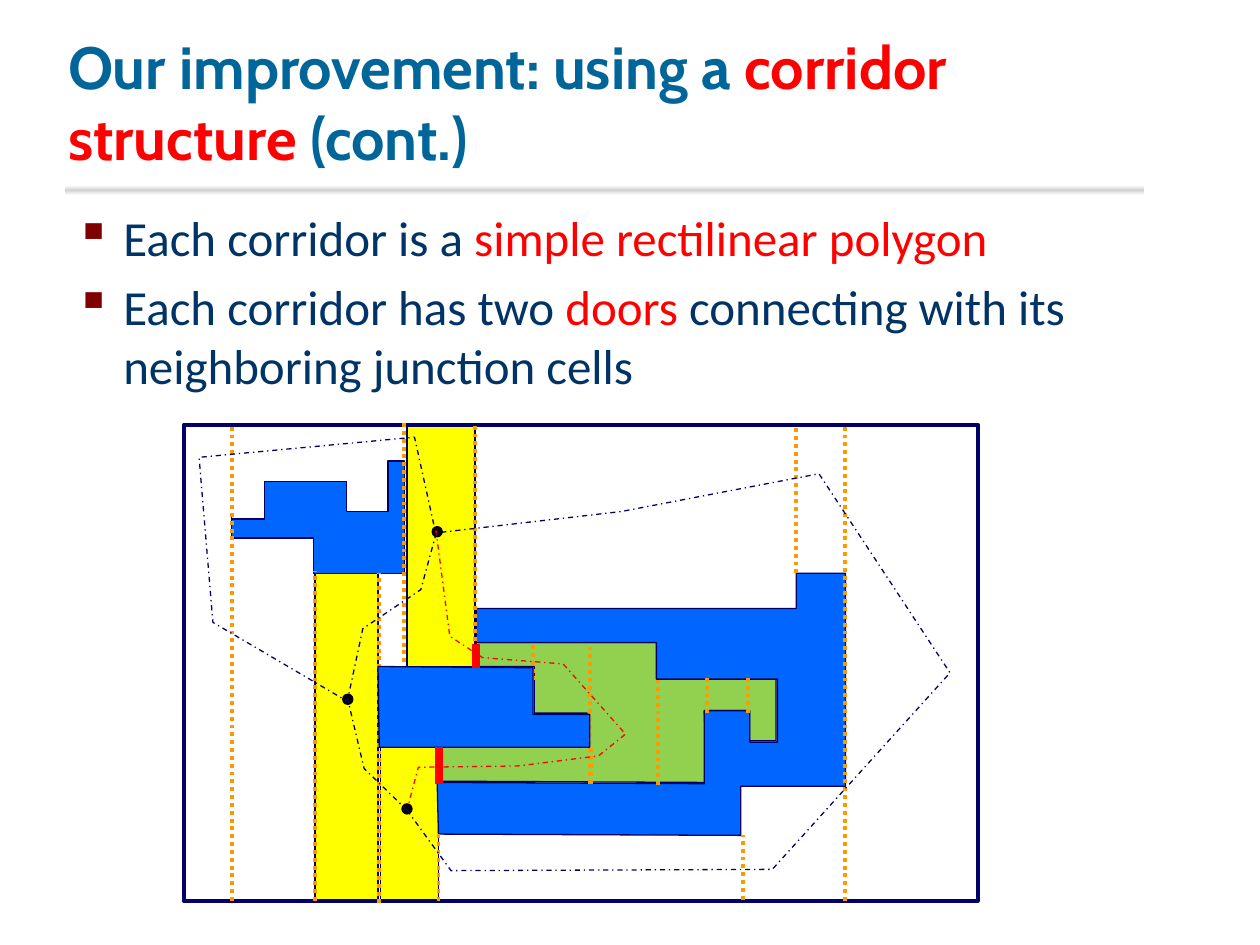
from typing import NamedTuple, Optional

from lxml import etree
from pptx import Presentation, util as u
from pptx.dml.color import RGBColor
from pptx.enum import dml, shapes, text
from pptx.oxml.ns import qn

COLORS = {
    "title": "006699", "body": "003366", "accent": "FF0000", "bullet": "800000",
    "outline": "000066", "obstacle": "0066FF", "junction": "FFFF00",
    "corridor": "92D050", "cut": "FF9900", "node": "000000",
    "rule": "D2D2D2", "paper": "FFFFFF",
}
COLUMNS, ROWS = 1000, 750
CELL = u.Inches(0.01)
SOLID, DOTTED, DASHED = (dml.MSO_LINE.SOLID, dml.MSO_LINE.ROUND_DOT, dml.MSO_LINE.DASH_DOT)


class Box(NamedTuple):
    left: float
    top: float
    width: float
    height: float


class Outline(NamedTuple):
    points: list
    fill: Optional[str] = None
    line: str = "outline"
    dash: dml.MSO_LINE = SOLID


class Segment(NamedTuple):
    start: tuple
    end: tuple
    color: str = "cut"
    width: float = 2.25
    dash: dml.MSO_LINE = DOTTED


def rgb(name: str) -> RGBColor:
    return RGBColor.from_string(COLORS[name])


def cells(*counts: float) -> list:
    return [int(count * CELL) for count in counts]


def style(shape, fill: Optional[str], line: Optional[str], width=0.75, dash=SOLID) -> None:
    shape.shadow.inherit = False
    if fill:
        shape.fill.solid()
        shape.fill.fore_color.rgb = rgb(fill)
    else:
        shape.fill.background()
    if line:
        shape.line.color.rgb = rgb(line)
        shape.line.width = u.Pt(width)
        shape.line.dash_style = dash
    else:
        shape.line.fill.background()


def draw_box(slide, box: Box, fill=None, line="outline", width=0.75,
             kind=shapes.MSO_SHAPE.RECTANGLE):
    shape = slide.shapes.add_shape(kind, *cells(*box))
    style(shape, fill, line, width)
    return shape


def draw_outline(slide, outline: Outline) -> None:
    first, *others = outline.points
    builder = slide.shapes.build_freeform(*first, scale=CELL)
    builder.add_line_segments(others, close=False)
    style(builder.convert_to_shape(), outline.fill, outline.line, dash=outline.dash)


def draw_segment(slide, segment: Segment) -> None:
    line = slide.shapes.add_connector(
        shapes.MSO_CONNECTOR.STRAIGHT, *cells(*segment.start, *segment.end))
    line.line.color.rgb = rgb(segment.color)
    line.line.width = u.Pt(segment.width)
    line.line.dash_style = segment.dash
    etree.SubElement(line._element.spPr, qn("a:effectLst"))


def draw_rule(slide, box: Box) -> None:
    rule = draw_box(slide, box, "rule", None)
    rule.fill.gradient()
    rule.fill.gradient_angle = 90
    for stop, color in zip(rule.fill.gradient_stops, ("paper", "rule")):
        stop.color.rgb = rgb(color)
        stop.position = 0 if color == "paper" else 0.5
    stops = rule._element.spPr.find(qn("a:gradFill")).find(qn("a:gsLst"))
    last = etree.SubElement(stops, qn("a:gs"), pos="100000")
    etree.SubElement(last, qn("a:srgbClr"), val=COLORS["paper"])


def write(frame, paragraphs: list, *, font: str, size: float, bold=False,
          anchor=text.MSO_ANCHOR.TOP, bullet: Optional[str] = None) -> None:
    frame.word_wrap = True
    frame.auto_size = text.MSO_AUTO_SIZE.NONE
    frame.vertical_anchor = anchor
    for index, runs in enumerate(paragraphs):
        paragraph = frame.add_paragraph() if index else frame.paragraphs[0]
        paragraph.alignment = text.PP_ALIGN.LEFT
        for words, color in runs:
            run = paragraph.add_run()
            run.text = words
            run.font.name, run.font.size, run.font.bold = font, u.Pt(size), bold
            run.font.color.rgb = rgb(color)
        if bullet:
            paragraph.space_before = u.Pt(size * 0.2)
            props = paragraph._p.get_or_add_pPr()
            indent = u.Inches(0.38)
            props.set("marL", str(indent))
            props.set("indent", str(-indent))
            tint = etree.SubElement(props, qn("a:buClr"))
            etree.SubElement(tint, qn("a:srgbClr"), val=COLORS["bullet"])
            etree.SubElement(props, qn("a:buChar"), char=bullet)


TITLE = [[("Our improvement: using a ", "title"), ("corridor structure ", "accent"),
          ("(cont.)", "title")]]
POINTS = [
    [("Each corridor is a ", "body"), ("simple rectilinear polygon", "accent")],
    [("Each corridor has two ", "body"), ("doors", "accent"),
     (" connecting with its neighboring junction cells", "body")],
]
CORRIDOR = Outline([
    (346, 620), (561, 621), (559, 564), (595, 564), (595, 588), (616, 588), (616, 538),
    (522, 538), (522, 510), (378, 510), (378, 529), (424, 529), (424, 566), (466, 566),
    (466, 591), (347, 591)], "corridor")
JUNCTIONS = [Box(302, 593, 46, 121), Box(323, 336, 54, 193), Box(250, 455, 50, 259)]
OUTER_OBSTACLES = [
    Outline([(184, 410), (184, 427), (249, 427), (249, 455), (321, 455), (321, 366),
             (308, 366), (308, 406), (275, 406), (275, 382), (210, 382), (210, 412),
             (184, 412)], "obstacle"),
    Outline([(377, 494), (377, 510), (521, 510), (521, 539), (617, 539), (617, 589),
             (595, 589), (595, 564), (559, 564), (559, 622), (347, 621), (348, 662),
             (588, 663), (588, 624), (671, 624), (671, 455), (632, 455), (632, 483),
             (378, 483), (378, 512)], "obstacle"),
]
MIDDLE_OBSTACLE = Outline([(300, 529), (423, 530), (423, 567), (468, 567), (468, 593),
                           (301, 593), (300, 529)], "obstacle")
CUTS = [(377, 540, 337), (321, 538, 336), (671, 715, 336), (184, 715, 336),
        (301, 717, 455), (250, 715, 453), (348, 715, 662), (590, 714, 663),
        (468.5, 622, 512), (522.5, 623, 540), (423, 540, 512), (561, 566, 538),
        (594, 566, 538), (632, 455, 337)]
FRONT_CUTS = [(348, 621, 593), (469, 622, 593)]
NODES = [(323, 642), (276, 555), (347, 422)]
NODE_SIZE = 8
PATHS = [
    Outline([(323, 643), (358, 691), (613, 690), (754, 534), (650, 376), (493, 406),
             (346, 423)], dash=DASHED),
    Outline([(346, 421), (357, 505), (383, 522), (447, 527), (495, 581)],
            line="accent", dash=DASHED),
    Outline([(496, 583), (475, 600), (411, 608), (332, 609), (324, 639)],
            line="accent", dash=DASHED),
    Outline([(323, 643), (289, 610), (276, 555), (288, 499), (334, 468), (346, 424),
             (329, 347), (158, 363), (169, 494), (278, 558)], dash=DASHED),
]
DOORS = [(378, 511, 530), (348.5, 593, 622)]


def main() -> None:
    deck = Presentation()
    deck.slide_width, deck.slide_height = cells(COLUMNS, ROWS)
    slide = deck.slides.add_slide(deck.slide_layouts[5])

    draw_rule(slide, Box(52, 147, 856, 8))
    heading = slide.shapes.title
    heading.left, heading.top, heading.width, heading.height = cells(44, 17, 850, 125)
    write(heading.text_frame, TITLE, font="Cabin", size=34, bold=True,
          anchor=text.MSO_ANCHOR.BOTTOM)
    body = slide.shapes.add_textbox(*cells(50, 160, 891, 176))
    write(body.text_frame, POINTS, font="Calibri", size=28, bullet="▪")

    draw_outline(slide, CORRIDOR)
    for junction in JUNCTIONS:
        draw_box(slide, junction, "junction")
    draw_box(slide, Box(146, 337, 630, 378), width=2.25)
    for obstacle in OUTER_OBSTACLES:
        draw_outline(slide, obstacle)
    for x, bottom, top in CUTS:
        draw_segment(slide, Segment((x, bottom), (x, top)))
    draw_outline(slide, MIDDLE_OBSTACLE)
    for x, bottom, top in FRONT_CUTS:
        draw_segment(slide, Segment((x, bottom), (x, top)))
    for x, y in NODES:
        draw_box(slide, Box(x - NODE_SIZE / 2, y - NODE_SIZE / 2, NODE_SIZE, NODE_SIZE),
                 "node", "node", kind=shapes.MSO_SHAPE.OVAL)
    for path_outline in PATHS:
        draw_outline(slide, path_outline)
    for x, top, bottom in DOORS:
        draw_segment(slide, Segment((x, top), (x, bottom), "accent", 4.5, SOLID))

    deck.save("out.pptx")


if __name__ == "__main__":
    main()
